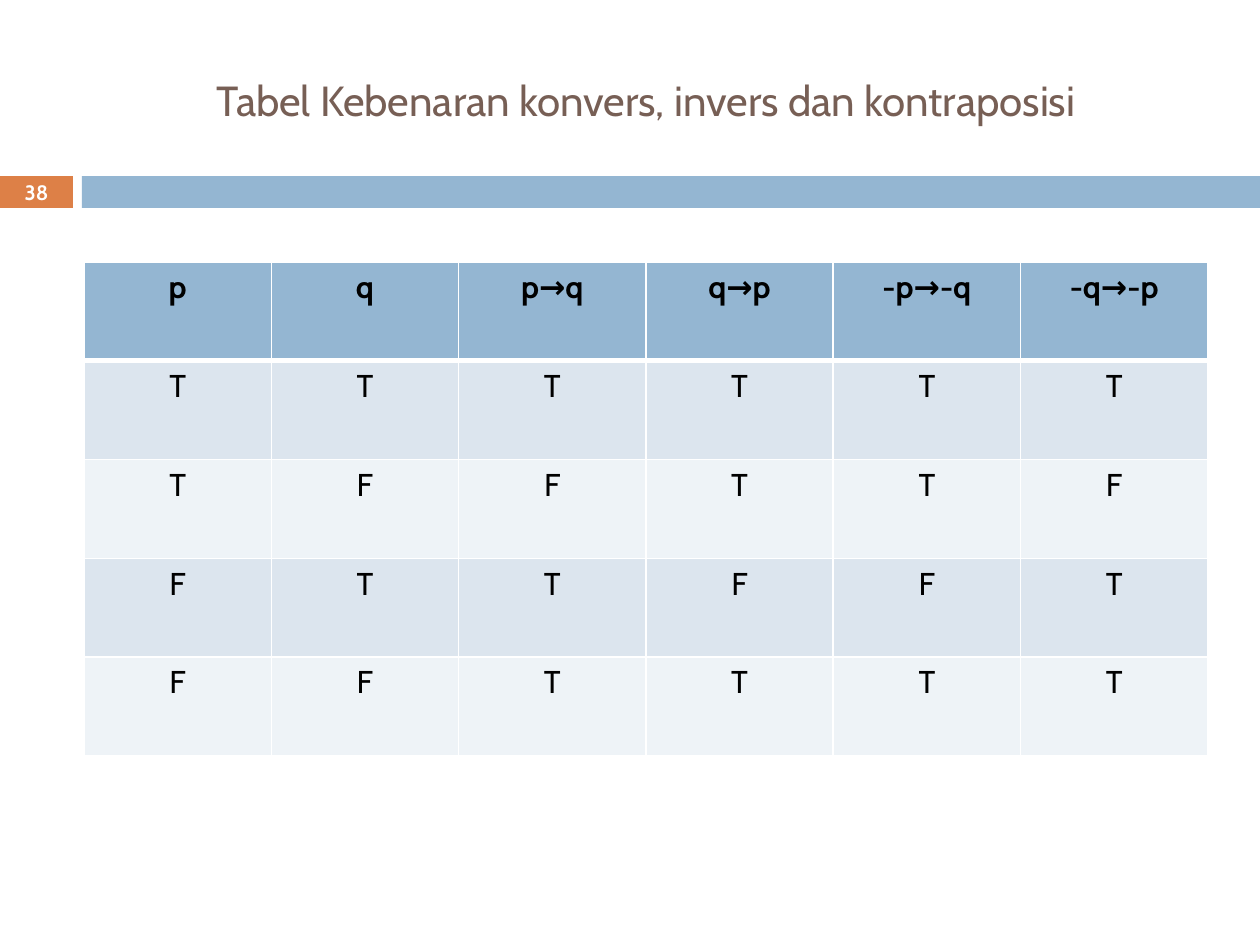
from lxml import etree
from pptx import Presentation
from pptx.dml.color import RGBColor
from pptx.enum.shapes import MSO_SHAPE
from pptx.enum.text import MSO_ANCHOR, PP_ALIGN
from pptx.oxml.ns import qn
from pptx.util import Emu, Pt

RECT = MSO_SHAPE.RECTANGLE
MIDDLE = MSO_ANCHOR.MIDDLE
CENTER = PP_ALIGN.CENTER

FONT = "Cabin"
WHITE = RGBColor(0xFF, 0xFF, 0xFF)
BLACK = RGBColor(0x00, 0x00, 0x00)
BROWN = RGBColor(0x77, 0x5F, 0x55)
ORANGE = RGBColor(0xDD, 0x80, 0x47)
BLUE = RGBColor(0x94, 0xB6, 0xD2)
BAND_DARK = RGBColor(0xDC, 0xE5, 0xEE)
BAND_LIGHT = RGBColor(0xEE, 0xF3, 0xF7)

HEADERS = ["p", "q", "p→q", "q→p", "-p→-q", "-q→-p"]
TRUTH_ROWS = ["TTTTTT", "TFFTTF", "FTTFFT", "FFTTTT"]


def px(n):
    return Emu(round(n * 914400 / 126))


def write(tf, text, size=18, color=BLACK, bold=False):
    p = tf.paragraphs[0]
    p.alignment = CENTER
    r = p.add_run()
    r.text = text
    r.font.name = FONT
    r.font.size = Pt(size)
    r.font.bold = bold
    r.font.color.rgb = color


def add_text(slide, box, text, **fmt):
    tf = slide.shapes.add_textbox(*map(px, box)).text_frame
    tf.word_wrap = True
    tf.vertical_anchor = MIDDLE
    write(tf, text, **fmt)


def add_bar(slide, box, color):
    sp = slide.shapes.add_shape(RECT, *map(px, box))
    sp.shadow.inherit = False
    sp.fill.solid()
    sp.fill.fore_color.rgb = color
    sp.line.fill.background()


def add_number_band(slide, box, number):
    """Orange page number tab followed by a blue bar to the right edge."""
    x, y, w, h = box
    tab_w, gap = 73, 9
    add_bar(slide, (x, y, tab_w, h), ORANGE)
    add_bar(slide, (x + tab_w + gap, y, w - tab_w - gap, h), BLUE)
    add_text(slide, (x, y, tab_w, h), number, size=11.9, color=WHITE, bold=True)


def set_borders(cell, **widths):
    """Draw white borders; widths are points by side, in schema order."""
    tc_pr = cell._tc.get_or_add_tcPr()
    for i, (side, width) in enumerate(widths.items()):
        ln = etree.Element(qn(f"a:ln{side}"), w=str(Pt(width)))
        fill = etree.SubElement(ln, qn("a:solidFill"))
        etree.SubElement(fill, qn("a:srgbClr"), val=str(WHITE))
        tc_pr.insert(i, ln)


def add_truth_table(slide, box):
    rows = [HEADERS, *TRUTH_ROWS]
    table = slide.shapes.add_table(len(rows), len(HEADERS), *map(px, box)).table
    for i, row in enumerate(rows):
        header = i == 0
        band = BLUE if header else BAND_DARK if i % 2 else BAND_LIGHT
        for j, text in enumerate(row):
            cell = table.cell(i, j)
            cell.fill.solid()
            cell.fill.fore_color.rgb = band
            set_borders(cell, L=1, R=1, T=3 if i == 1 else 1, B=3 if header else 1)
            write(cell.text_frame, text, bold=header)


def main():
    prs = Presentation()
    prs.slide_width, prs.slide_height = px(1260), px(945)
    slide = prs.slides.add_slide(prs.slide_layouts[6])
    add_number_band(slide, (0, 176, 1260, 32), "38")
    add_text(slide, (84, 32, 1124, 136),
             "Tabel Kebenaran konvers, invers dan kontraposisi",
             size=24, color=BROWN)
    add_truth_table(slide, (84, 262, 1124, 494))
    prs.save("out.pptx")


if __name__ == "__main__":
    main()
